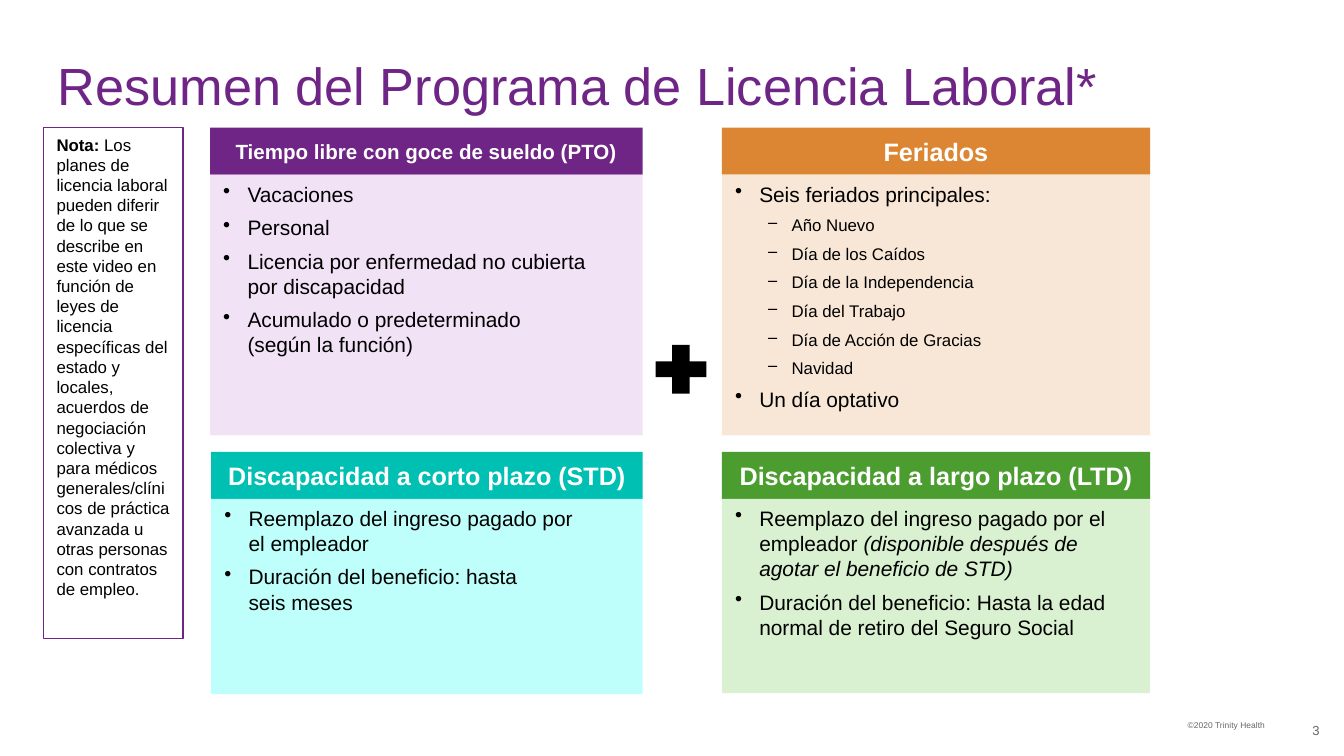
import pptx
import pptx.util
import pptx.dml.color
import pptx.enum.shapes
import pptx.enum.text
import lxml.etree

Pt = pptx.util.Pt
RGB = pptx.dml.color.RGBColor
SHAPE = pptx.enum.shapes.MSO_SHAPE
ALIGN = pptx.enum.text.PP_ALIGN
ANCHOR = pptx.enum.text.MSO_ANCHOR

PURPLE = RGB(0x6E, 0x25, 0x85)
LILAC = RGB(0xE7, 0xCA, 0xF0)
ORANGE = RGB(0xDC, 0x86, 0x33)
PEACH = RGB(0xF8, 0xE7, 0xD6)
TEAL = RGB(0x00, 0xBF, 0xB3)
AQUA = RGB(0xBF, 0xFF, 0xFB)
GREEN = RGB(0x4C, 0x9D, 0x2F)
MINT = RGB(0xD9, 0xF1, 0xD0)
BLACK = RGB(0, 0, 0)
WHITE = RGB(255, 255, 255)
GRAY = RGB(0x66, 0x66, 0x66)

TOP, LOW = 68.4, 242.1
HEAD = 25.2
MARKS = (("•", 13, 11.2), ("‒", 30.3, 9))

CARDS = (
    ((112.5, TOP, 231.8, 164.9), PURPLE, LILAC, 54, 11,
     "Tiempo libre con goce de sueldo (PTO)",
     ((0, "Vacaciones"),
      (0, "Personal"),
      (0, "Licencia por enfermedad no cubierta \npor discapacidad"),
      (0, "Acumulado o predeterminado \n(según la función)"))),
    ((386.7, TOP, 229.5, 164.9), ORANGE, PEACH, 100, 13.5, "Feriados",
     ((0, "Seis feriados principales:"),
      (1, "Año Nuevo"),
      (1, "Día de los Caídos"),
      (1, "Día de la Independencia"),
      (1, "Día del Trabajo"),
      (1, "Día de Acción de Gracias"),
      (1, "Navidad"),
      (0, "Un día optativo"))),
    ((386.7, LOW, 229.5, 129.3), GREEN, MINT, 100, 13.5,
     "Discapacidad a largo plazo (LTD)",
     ((0, "Reemplazo del ingreso pagado por el empleador ",
       "(disponible después de agotar el beneficio de STD)"),
      (0, "Duración del beneficio: Hasta la edad normal de retiro "
          "del Seguro Social"))),
    ((113.1, LOW, 231.2, 129.8), TEAL, AQUA, 100, 13.5,
     "Discapacidad a corto plazo (STD)",
     ((0, "Reemplazo del ingreso pagado por \nel empleador"),
      (0, "Duración del beneficio: hasta \nseis meses"))),
)

NOTE = ("Los planes de licencia laboral pueden diferir de lo que se describe "
        "en este video en función de leyes de licencia específicas del estado "
        "y locales, acuerdos de negociación colectiva y para médicos "
        "generales/clínicos de práctica avanzada u otras personas con "
        "contratos de empleo.")


def style(para, size, color, bold=None, align=ALIGN.LEFT):
    """Set the font and alignment of a paragraph."""
    para.alignment = align
    font = para.font
    font.name, font.size, font.bold = "Arial", Pt(size), bold
    font.color.rgb = color


def add_box(slide, box, fill, kind=SHAPE.RECTANGLE):
    """Add a flat shape without a line and return it."""
    shape = slide.shapes.add_shape(kind, *map(Pt, box))
    shape.shadow.inherit = False
    shape.line.fill.background()
    if fill is None:
        shape.fill.background()
    else:
        shape.fill.solid()
        shape.fill.fore_color.rgb = fill
    shape.text_frame.word_wrap = True
    shape.text_frame.vertical_anchor = ANCHOR.TOP
    return shape


def fade(shape, percent):
    """Make the solid fill of a shape partly clear."""
    color = shape.fill._xPr.find(".//" + pptx.oxml.ns.qn("a:srgbClr"))
    alpha = lxml.etree.SubElement(color, pptx.oxml.ns.qn("a:alpha"))
    alpha.set("val", str(percent * 1000))


def add_item(para, level, text, tail=""):
    """Fill a bulleted paragraph, with an optional italic tail."""
    mark, left, size = MARKS[level]
    para.text = text
    para.level = level
    props = para._p.get_or_add_pPr()
    props.set("marL", str(Pt(left)))
    props.set("indent", str(Pt(-13)))
    para.space_after = Pt(4.5)
    bullet = lxml.etree.SubElement(props, pptx.oxml.ns.qn("a:buChar"))
    bullet.set("char", mark)
    style(para, size, BLACK)
    if tail:
        run = para.add_run()
        run.text = tail
        run.font.italic = True


def add_card(slide, box, dark, light, solid, size, title, items):
    """Add a heading bar over a panel of bullets."""
    left, top, width, height = box
    bar = add_box(slide, (left, top, width, HEAD), dark)
    bar.text_frame.vertical_anchor = ANCHOR.MIDDLE
    head = bar.text_frame.paragraphs[0]
    head.text = title
    style(head, size, WHITE, True, ALIGN.CENTER)
    panel = add_box(slide, (left, top + HEAD, width, height - HEAD), light)
    if solid < 100:
        fade(panel, solid)
    frame = panel.text_frame
    for index, item in enumerate(items):
        para = frame.add_paragraph() if index else frame.paragraphs[0]
        add_item(para, *item)


def add_title(slide, box):
    """Place and format the title."""
    title = slide.shapes.title
    title.left, title.top, title.width, title.height = map(Pt, box)
    frame = title.text_frame
    frame.text = "Resumen del Programa de Licencia Laboral*"
    frame.margin_left = frame.margin_right = 0
    frame.margin_top = frame.margin_bottom = 0
    frame.vertical_anchor = ANCHOR.MIDDLE
    frame.word_wrap = True
    frame.auto_size = pptx.enum.text.MSO_AUTO_SIZE.NONE
    frame.paragraphs[0].line_spacing = 0.9
    style(frame.paragraphs[0], 28, PURPLE)


def add_note(slide, box):
    """Add the outlined note."""
    shape = add_box(slide, box, None)
    shape.line.color.rgb = PURPLE
    shape.line.width = Pt(0.75)
    para = shape.text_frame.paragraphs[0]
    style(para, 9, BLACK)
    label = para.add_run()
    label.text = "Nota: "
    label.font.bold = True
    para.add_run().text = NOTE


def add_label(slide, box, text, size):
    """Add right-aligned footer text and return its frame."""
    frame = slide.shapes.add_textbox(*map(Pt, box)).text_frame
    frame.word_wrap = True
    frame.text = text
    style(frame.paragraphs[0], size, GRAY, align=ALIGN.RIGHT)
    return frame


def add_foot(slide, box):
    """Add the copyright line and the page number."""
    left, top, width, height = box
    add_label(slide, (left, top + 2.2, 226.8, 14.4), "©2020 Trinity Health", 4.5)
    page = add_label(slide, (left + width - 31.7, top, 31.7, height), "3", 7)
    page.margin_right = 0
    page.vertical_anchor = ANCHOR.MIDDLE


def main():
    """Build and save the slide."""
    deck = pptx.Presentation()
    deck.slide_width, deck.slide_height = Pt(720), Pt(405)
    slide = deck.slides.add_slide(deck.slide_layouts[5])
    add_title(slide, (31, 27.4, 648, 39.6))
    for card in CARDS:
        add_card(slide, *card)
    plus = add_box(slide, (351.2, 184.8, 27.2, 26.1), BLACK, SHAPE.CROSS)
    plus.adjustments[0] = 0.34
    add_foot(slide, (457.9, 380.2, 249.1, 21.6))
    add_note(slide, (23.2, TOP, 74.8, 273.6))
    deck.save("out.pptx")


if __name__ == "__main__":
    main()
